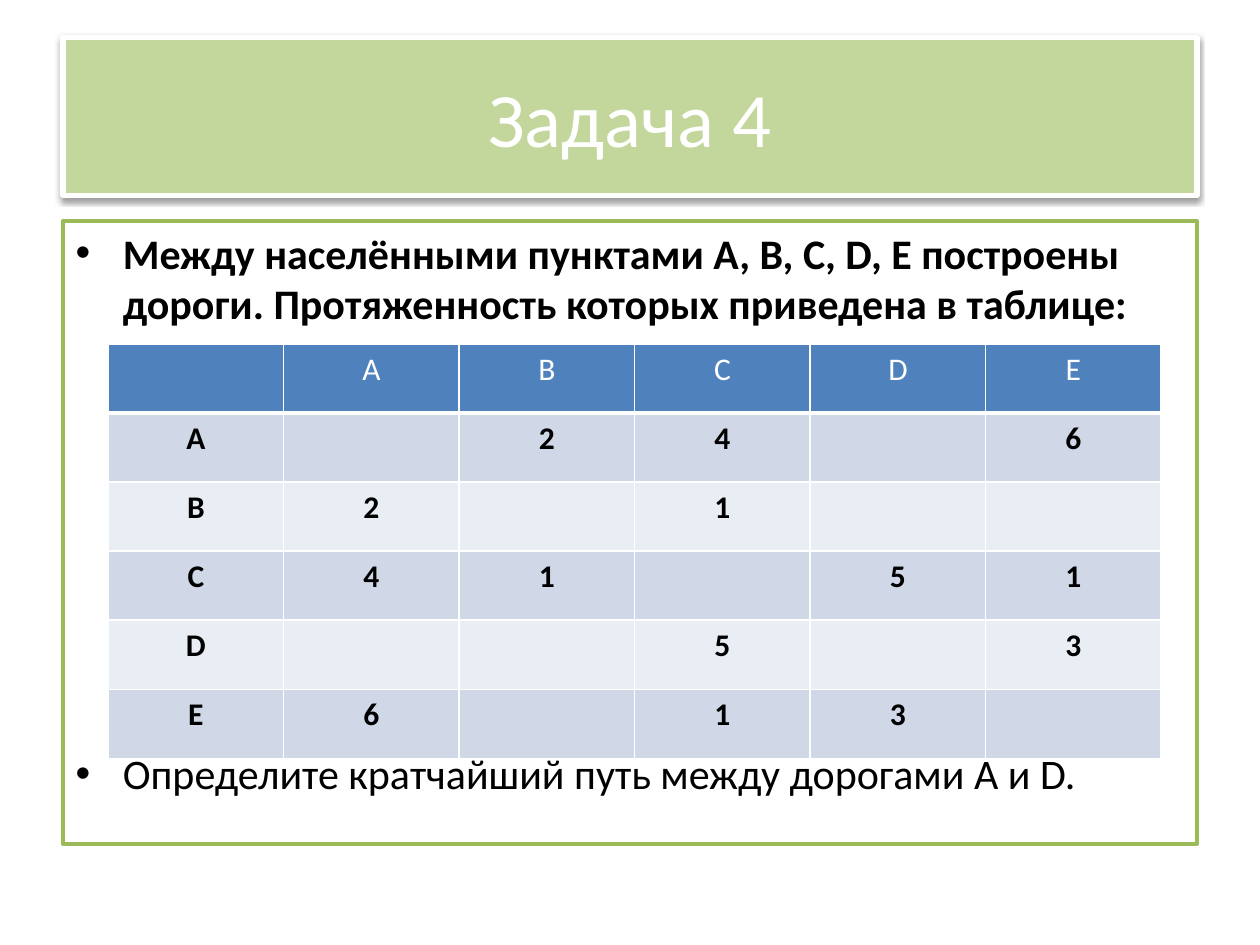
from dataclasses import dataclass

from lxml.etree import SubElement
from pptx import Presentation
from pptx.dml.color import RGBColor as Rgb
from pptx.enum.text import MSO_ANCHOR as Anchor, MSO_AUTO_SIZE as AutoSize, PP_ALIGN as Align
from pptx.oxml.ns import qn
from pptx.util import Cm, Pt


@dataclass(frozen=True)
class Theme:
    font: str = "Calibri"
    white: str = "FFFFFF"
    black: str = "000000"
    title_fill: str = "C3D69B"
    frame: str = "9BBB59"
    header: str = "4F81BD"
    bands: tuple = ("D0D8E8", "E9EDF4")
    title_size: int = 44
    body_size: int = 24
    cell_size: int = 18


@dataclass(frozen=True)
class Box:
    left: float
    top: float
    width: float
    height: float


@dataclass(frozen=True)
class Road:
    start: str
    end: str
    length: int


THEME = Theme()
TITLE_BOX = Box(1.27, 0.76, 22.86, 3.18)
BODY_BOX = Box(1.27, 4.45, 22.86, 12.57)
TABLE_BOX = Box(2.18, 6.93, 21.23, 8.36)
TOWNS = "ABCDE"
ROADS = [
    Road("A", "B", 2), Road("A", "C", 4), Road("A", "E", 6), Road("B", "C", 1),
    Road("C", "D", 5), Road("C", "E", 1), Road("D", "E", 3),
]
TABLE_GAP = 240  # points left free for the table between the two bullets


def frame_placeholder(holder, box: Box, fill: str, line: str, width: float) -> None:
    holder.left, holder.top = Cm(box.left), Cm(box.top)
    holder.width, holder.height = Cm(box.width), Cm(box.height)
    holder.fill.solid()
    holder.fill.fore_color.rgb = Rgb.from_string(fill)
    holder.line.color.rgb = Rgb.from_string(line)
    holder.line.width = Pt(width)
    holder.text_frame.auto_size = AutoSize.NONE


def style(paragraph, size: float, color: str, bold: bool = False) -> None:
    font = paragraph.font
    font.name, font.size, font.bold = THEME.font, Pt(size), bold
    font.color.rgb = Rgb.from_string(color)


def add_soft_shadow(shape) -> None:
    effects = SubElement(shape._element.spPr, qn("a:effectLst"))
    shadow = SubElement(effects, qn("a:outerShdw"), blurRad=str(Pt(3.1)),
                        dist=str(Pt(1.6)), dir="5400000", rotWithShape="0")
    color = SubElement(shadow, qn("a:srgbClr"), val=THEME.black)
    SubElement(color, qn("a:alpha"), val="38000")


def fill_cell(cell, text: str, fill: str, color: str, bold: bool, bottom: float) -> None:
    # Borders come before the fill in the cell properties
    properties = cell._tc.get_or_add_tcPr()
    for side, width in (("L", 1), ("R", 1), ("T", 1), ("B", bottom)):
        border = SubElement(properties, qn(f"a:ln{side}"), w=str(Pt(width)))
        solid = SubElement(border, qn("a:solidFill"))
        SubElement(solid, qn("a:srgbClr"), val=THEME.white)
    cell.fill.solid()
    cell.fill.fore_color.rgb = Rgb.from_string(fill)
    cell.text = text
    paragraph = cell.text_frame.paragraphs[0]
    paragraph.alignment = Align.CENTER
    style(paragraph, THEME.cell_size, color, bold)


def add_road_table(slide, box: Box) -> None:
    lengths = {pair: str(road.length) for road in ROADS
               for pair in ((road.start, road.end), (road.end, road.start))}
    rows = [["", *TOWNS]]
    rows += [[town, *(lengths.get((town, other), "") for other in TOWNS)] for town in TOWNS]
    count = len(rows)
    table = slide.shapes.add_table(count, count, Cm(box.left), Cm(box.top),
                                   Cm(box.width), Cm(box.height)).table
    for r, row in enumerate(rows):
        is_header = r == 0
        fill = THEME.header if is_header else THEME.bands[(r - 1) % 2]
        color = THEME.white if is_header else THEME.black
        for c, text in enumerate(row):
            fill_cell(table.cell(r, c), text, fill, color, not is_header, 3 if is_header else 1)


def main() -> None:
    deck = Presentation()
    deck.slide_width, deck.slide_height = Cm(25.4), Cm(19.05)
    slide = deck.slides.add_slide(deck.slide_layouts[1])

    # Title
    title = slide.shapes.title
    frame_placeholder(title, TITLE_BOX, THEME.title_fill, THEME.white, 3)
    add_soft_shadow(title)
    title.text_frame.text = "Задача 4"
    title.text_frame.vertical_anchor = Anchor.MIDDLE
    heading = title.text_frame.paragraphs[0]
    heading.alignment = Align.CENTER
    style(heading, THEME.title_size, THEME.white)

    # Task statement and question
    body = slide.placeholders[1]
    frame_placeholder(body, BODY_BOX, THEME.white, THEME.frame, 2)
    statement = body.text_frame.paragraphs[0]
    statement.text = ("Между населёнными пунктами A, B, C, D, E построены дороги. "
                      "Протяженность которых приведена в таблице:")
    style(statement, THEME.body_size, THEME.black, bold=True)
    question = body.text_frame.add_paragraph()
    question.text = "Определите кратчайший путь между дорогами A и D."
    question.space_before = Pt(TABLE_GAP)
    style(question, THEME.body_size, THEME.black)

    # Road lengths
    add_road_table(slide, TABLE_BOX)

    deck.save("out.pptx")


if __name__ == "__main__":
    main()
